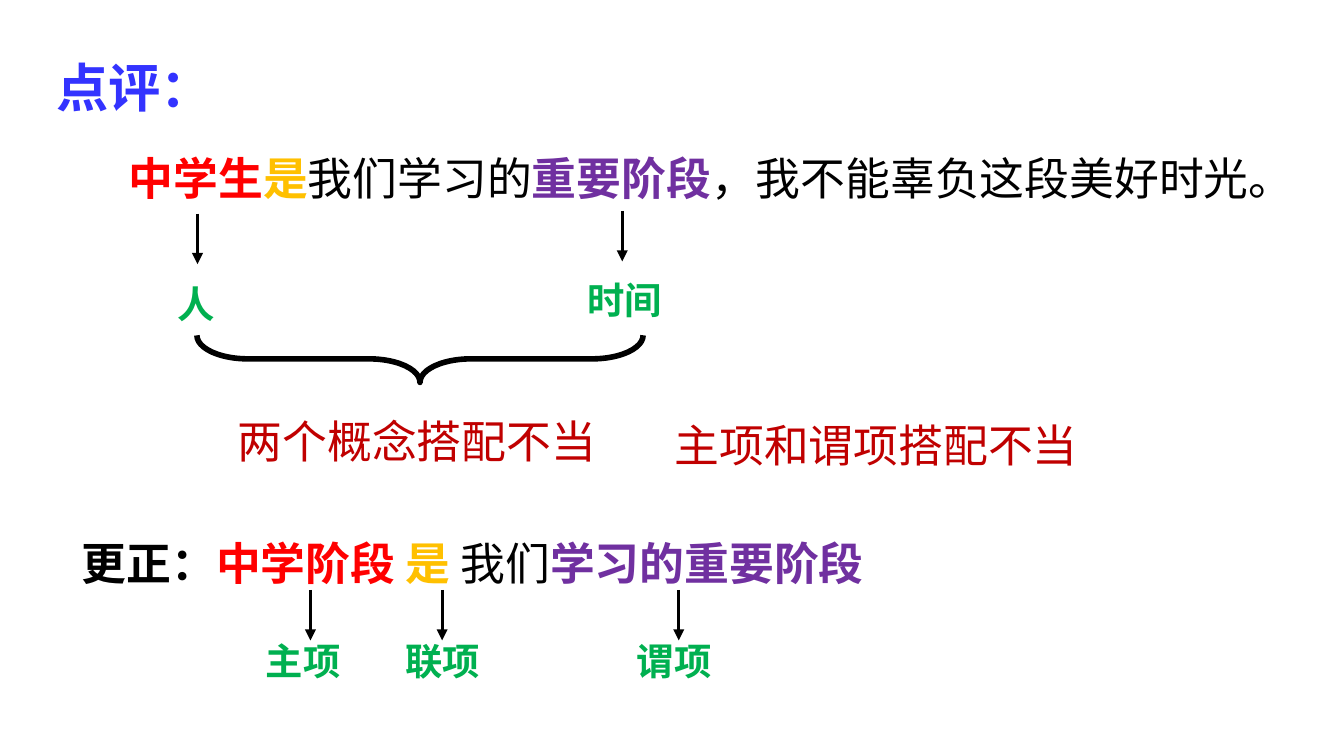
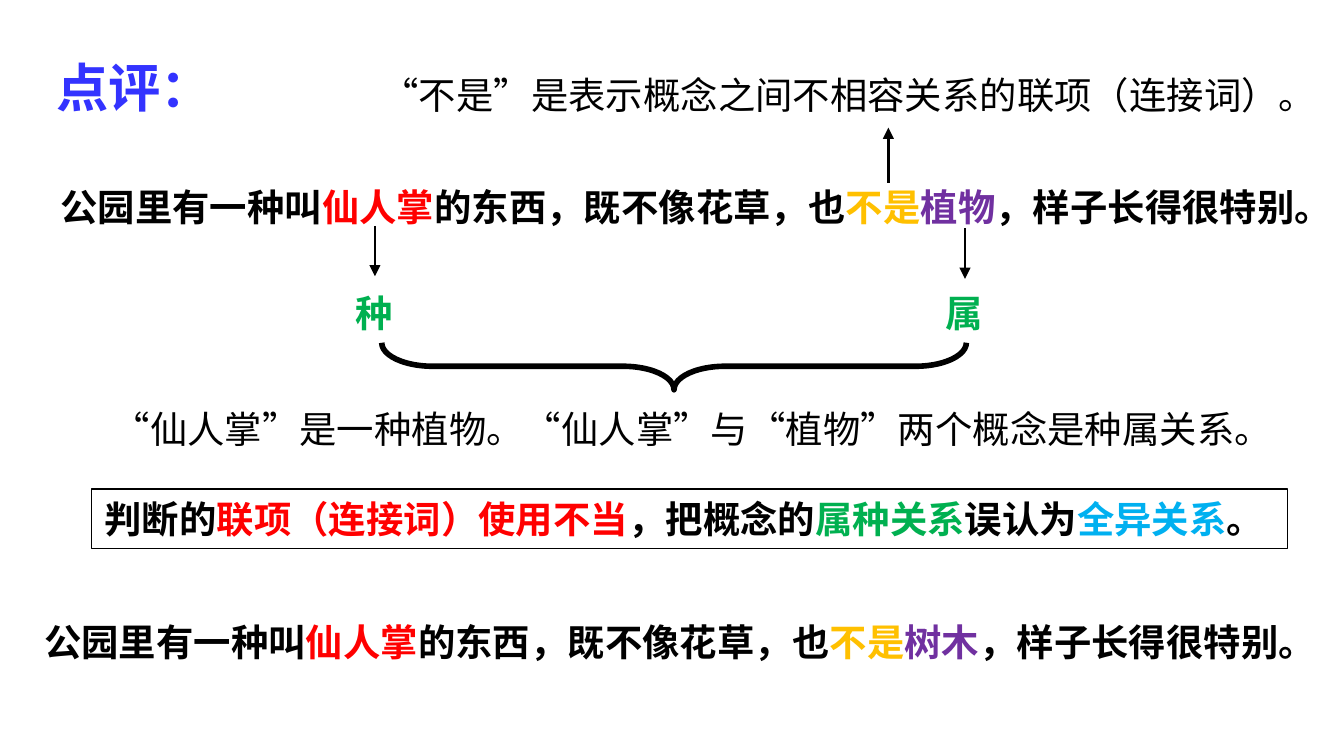
"""Build two slides that comment on faulty sentences and correct them."""
from lxml.etree import SubElement
from pptx import Presentation
from pptx.dml.color import RGBColor
from pptx.enum.shapes import MSO_CONNECTOR as Connector, MSO_SHAPE as Shape
from pptx.enum.text import MSO_ANCHOR as Anchor, MSO_AUTO_SIZE as AutoSize, PP_ALIGN as Align
from pptx.oxml.ns import qn
from pptx.util import Inches, Pt

COLOURS = {
    "black": "000000", "blue": "3333FF", "red": "FF0000", "amber": "FFC000",
    "purple": "7030A0", "green": "00B050", "crimson": "C00000", "sky": "00B0F0",
}
HAN, LATIN = "Noto Sans CJK SC", "Arial"
COLUMNS, ROWS = 100, 56.25
CELL = Inches(10) / COLUMNS
ARROW_ROWS = 3.75
BRACE_ROWS = 3.5


def cells(count):
    """Turn a count of grid cells into a length."""
    return round(count * CELL)


def colour(name):
    """Look up a named colour."""
    return RGBColor.from_string(COLOURS[name])


def apply(target, formats):
    """Set each format value on the target."""
    for key, value in formats.items():
        setattr(target, key, value)


def stroke(line, points):
    """Draw a line in black at the given weight."""
    line.color.rgb = colour("black")
    line.width = Pt(points)


def write(slide, box, runs, size=20, font=HAN, wrap=False, framed=False):
    """Place coloured runs of text in a box given in grid cells."""
    place = [cells(value) for value in box]
    if framed:
        holder = slide.shapes.add_shape(Shape.RECTANGLE, *place)
        holder.shadow.inherit = False
        holder.fill.background()
        stroke(holder.line, 0.75)
    else:
        holder = slide.shapes.add_textbox(*place)
    frame = holder.text_frame
    apply(frame, {"word_wrap": wrap, "auto_size": AutoSize.SHAPE_TO_FIT_TEXT,
                  "vertical_anchor": Anchor.TOP})
    paragraph = frame.paragraphs[0]
    paragraph.alignment = Align.LEFT
    for words, tint, bold in runs:
        run = paragraph.add_run()
        run.text = words
        apply(run.font, {"size": Pt(size), "name": font, "bold": bold})
        run.font.color.rgb = colour(tint)
        SubElement(run.font._element, qn("a:ea"), typeface=HAN)


def heading(slide):
    """Write the shared slide title."""
    write(slide, (3.2, 3.6, 13.8, 5.7), [("点评：", "blue", True)], 28, LATIN)


def label(slide, left, top, words):
    """Write a green term below an arrow."""
    width = 2 + 2.8 * len(words)
    write(slide, (left, top, width, 4.4), [(words, "green", True)], font=LATIN)


def arrow(slide, column, start, length=ARROW_ROWS):
    """Draw a vertical arrow; a negative length points up."""
    x = cells(column)
    link = slide.shapes.add_connector(
        Connector.STRAIGHT, x, cells(start), x, cells(start + length))
    stroke(link.line, 1.5)
    SubElement(link.line._get_or_add_ln(), qn("a:tailEnd"), type="triangle")
    SubElement(link._element.spPr, qn("a:effectLst"))


def brace(slide, left, top, span):
    """Draw a brace that lies below two terms and points down."""
    shift = (span - BRACE_ROWS) / 2
    shape = slide.shapes.add_shape(
        Shape.LEFT_BRACE, cells(left + shift), cells(top - shift),
        cells(BRACE_ROWS), cells(span))
    shape.rotation = 270
    shape.adjustments[0] = 1.08
    shape.shadow.inherit = False
    shape.fill.background()
    stroke(shape.line, 3)


def cactus_sentence(slide, box, noun):
    """Write the cactus sentence with the given predicate noun."""
    write(slide, box, [
        ("公园里有一种叫", "black", True), ("仙人掌", "red", True),
        ("的东西，既不像花草，也", "black", True), ("不是", "amber", True),
        (noun, "purple", True), ("，样子长得很特别。", "black", True)], wrap=True)


def build_mismatch(slide):
    """Show a subject and a predicate that do not match."""
    heading(slide)
    write(slide, (8.6, 10.7, 91.4, 5.1), [
        ("中学生", "red", True), ("是", "amber", True), ("我们学习的", "black", False),
        ("重要阶段", "purple", True), ("，我不能辜负这段美好时光。", "black", False)],
        24, wrap=True)
    for column, start, left, top, term in (
            (14.7, 15.9, 12.2, 20.4, "人"), (46.3, 15.7, 42.7, 20.1, "时间")):
        arrow(slide, column, start)
        label(slide, left, top, term)
    brace(slide, 14.65, 24.95, 33.2)
    for left, top, width, fault in (
            (16.7, 30.3, 29, "两个概念搭配不当"), (49.2, 30.6, 32.3, "主项和谓项搭配不当")):
        write(slide, (left, top, width, 5.1), [(fault, "crimson", False)], 24)
    write(slide, (5.1, 39.4, 62.9, 5.1), [
        ("更正：", "black", True), ("中学阶段 ", "red", True), ("是 ", "amber", True),
        ("我们", "black", False), ("学习的重要阶段", "purple", True)], 24)
    for column, left, part in (
            (23.1, 18.8, "主项"), (32.9, 29.2, "联项"), (50.5, 46.4, "谓项")):
        arrow(slide, column, 43.9)
        label(slide, left, 47, part)


def build_copula(slide):
    """Show a linking word that misstates how two concepts relate."""
    heading(slide)
    write(slide, (27.4, 4.9, 70.2, 4.4), [
        ("“不是”是表示概念之间不相容关系的联项（连接词）。", "black", False)], wrap=True)
    arrow(slide, 66.1, 13.6, -4.1)
    cactus_sentence(slide, (3.5, 13.2, 94.9, 4.4), "植物")
    for column, start, left, rank in ((27.9, 16.8, 25.5, "种"), (71.8, 17, 69.4, "属")):
        arrow(slide, column, start)
        label(slide, left, 21.1, rank)
    brace(slide, 28.4, 25.5, 43.5)
    write(slide, (7.4, 29.7, 89, 4.4), [
        ("“仙人掌”是一种植物。“仙人掌”与“植物”两个概念是种属关系。", "black", False)])
    write(slide, (6.8, 36.4, 89, 4.4), [
        ("判断的", "black", True), ("联项（连接词）使用不当", "red", True),
        ("，把概念的", "black", True), ("属种关系", "green", True),
        ("误认为", "black", True), ("全异关系", "sky", True), ("。", "black", True)],
        framed=True)
    cactus_sentence(slide, (2.3, 45.6, 95.2, 4.4), "树木")


def main():
    """Build and save the slides."""
    deck = Presentation()
    apply(deck, {"slide_width": cells(COLUMNS), "slide_height": cells(ROWS)})
    for build in (build_mismatch, build_copula):
        build(deck.slides.add_slide(deck.slide_layouts[6]))
    deck.save("out.pptx")


if __name__ == "__main__":
    main()
